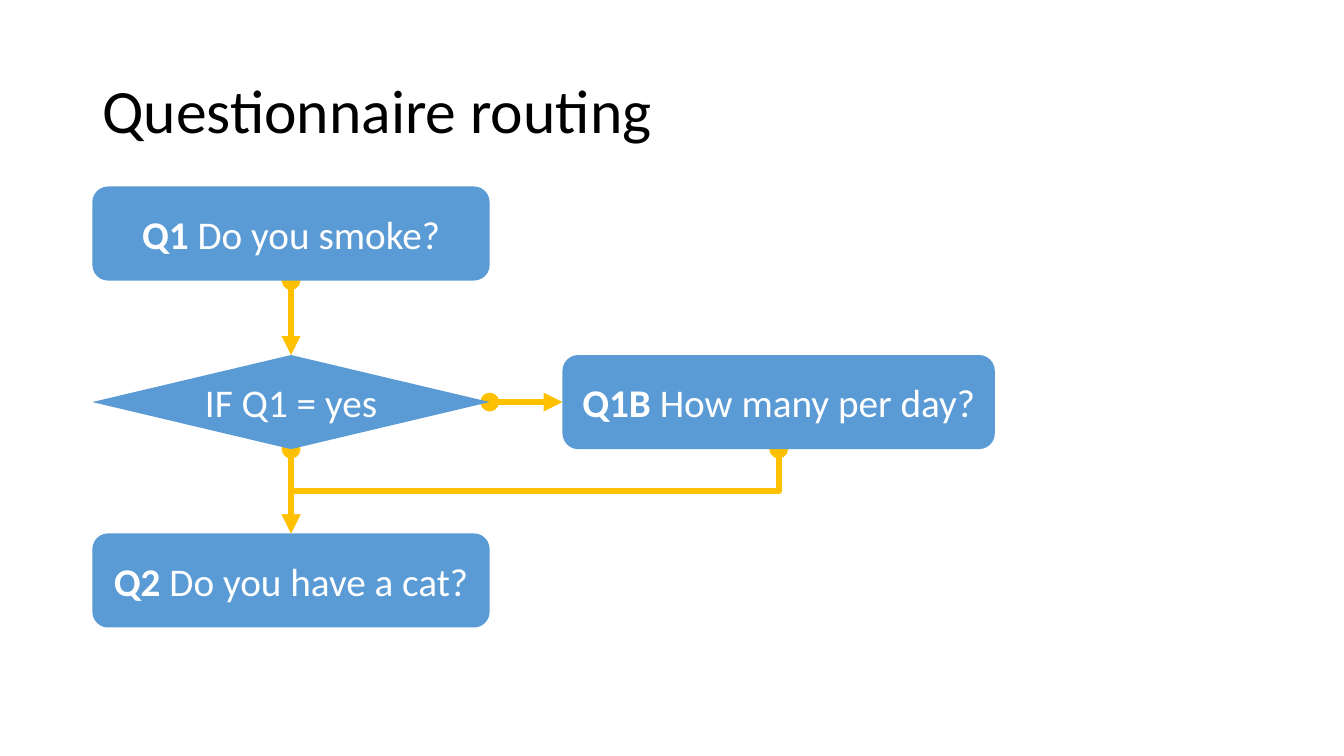
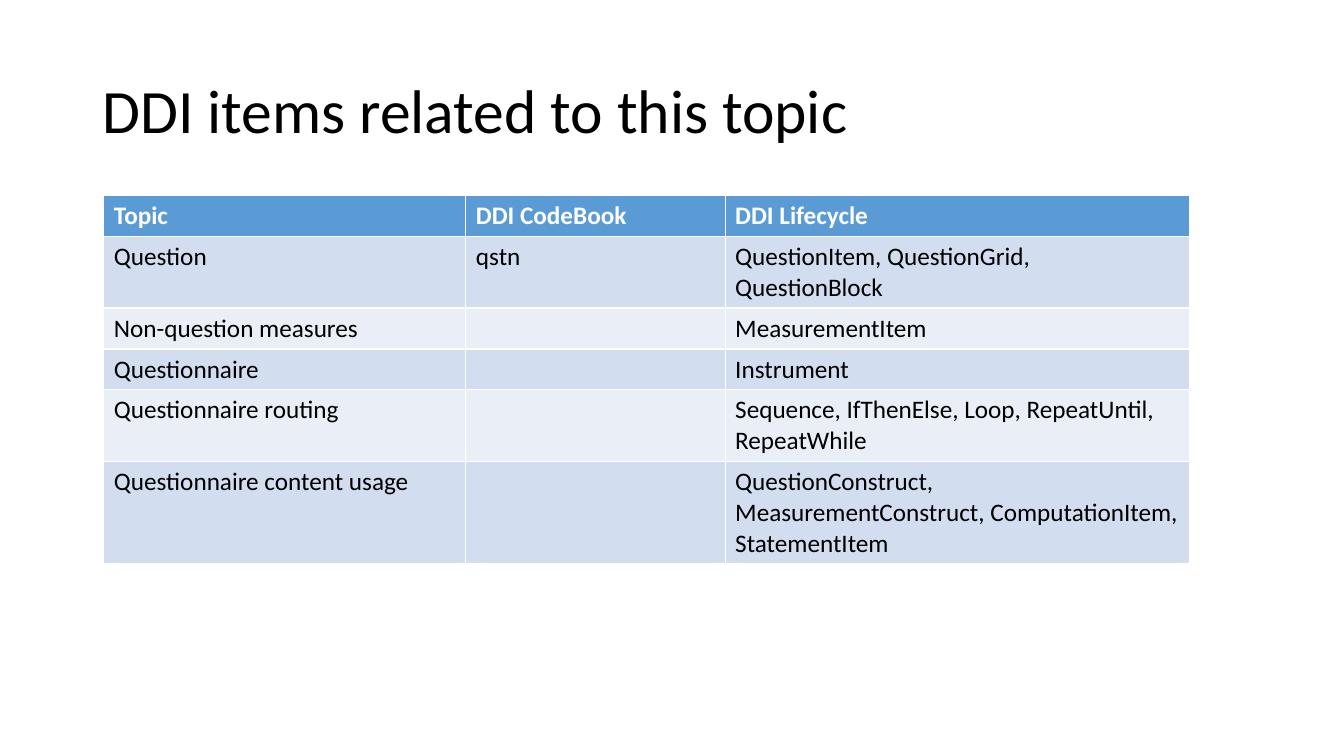
from lxml import etree
from pptx import Presentation
from pptx.dml.color import RGBColor
from pptx.enum import shapes, text
from pptx.oxml import ns
from pptx.util import Pt

FONT = "Calibri"
COLORS = {
    "ink": "000000",
    "paper": "FFFFFF",
    "blue": "5B9BD5",
    "band_dark": "D2DEEF",
    "band_light": "EAEFF7",
    "arrow": "FFC000",
}
TITLE_BOX = (66, 28.8, 828, 104.4)
FLOW_BOX = (66, 133.2, 644.6, 315)
TABLE_BOX = (74.2, 139.7, 775.8, 175.2)

TOP, LEFT, BOTTOM, RIGHT = range(4)  # connection sites of a box or a decision

DDI_ITEMS = [
    ("Topic", "DDI CodeBook", "DDI Lifecycle"),
    ("Question", "qstn", "QuestionItem, QuestionGrid, QuestionBlock"),
    ("Non-question measures", "", "MeasurementItem"),
    ("Questionnaire", "", "Instrument"),
    ("Questionnaire routing", "", "Sequence, IfThenElse, Loop, RepeatUntil, RepeatWhile"),
    ("Questionnaire content usage", "",
     "QuestionConstruct, MeasurementConstruct, ComputationItem, StatementItem"),
]


def rgb(name):
    return RGBColor.from_string(COLORS[name])


def points(*lengths):
    return [Pt(length) for length in lengths]


def write(frame, body, *, lead="", size=18, color="ink", bold=False,
          align=text.PP_ALIGN.LEFT, anchor=text.MSO_ANCHOR.TOP, spacing=None):
    """Fill a text frame with an optional bold lead and the body."""
    frame.word_wrap = True
    frame.vertical_anchor = anchor
    paragraph = frame.paragraphs[0]
    paragraph.alignment = align
    paragraph.line_spacing = spacing
    for words, weight in ((lead, True), (body, bold)):
        if words:
            run = paragraph.add_run()
            run.text = words
            run.font.name = FONT
            run.font.size = Pt(size)
            run.font.bold = weight
            run.font.color.rgb = rgb(color)


def add_titled_slide(deck, heading):
    slide = deck.slides.add_slide(deck.slide_layouts[5])
    title = slide.shapes.title
    title.left, title.top, title.width, title.height = points(*TITLE_BOX)
    title.text_frame.auto_size = text.MSO_AUTO_SIZE.NONE
    write(title.text_frame, heading, size=44, anchor=text.MSO_ANCHOR.MIDDLE, spacing=0.9)
    return slide


def add_step(slide, box, body, lead="", outline=shapes.MSO_SHAPE.ROUNDED_RECTANGLE):
    step = slide.shapes.add_shape(outline, *points(*box))
    step.shadow.inherit = False
    step.fill.solid()
    step.fill.fore_color.rgb = rgb("blue")
    step.line.fill.background()
    write(step.text_frame, body, lead=lead, size=28, color="paper",
          align=text.PP_ALIGN.CENTER, anchor=text.MSO_ANCHOR.MIDDLE)
    return step


def add_route(slide, source, source_site, target, target_site,
              kind=shapes.MSO_CONNECTOR.STRAIGHT):
    """Glue an arrow to two steps and place it behind them."""
    route = slide.shapes.add_connector(kind, 0, 0, 0, 0)
    route.begin_connect(source, source_site)
    route.end_connect(target, target_site)
    route.line.color.rgb = rgb("arrow")
    route.line.width = Pt(4.5)
    line = route.line._get_or_add_ln()
    for end, head in (("a:headEnd", "oval"), ("a:tailEnd", "triangle")):
        etree.SubElement(line, ns.qn(end), type=head)
    etree.SubElement(route._element.spPr, ns.qn("a:effectLst"))
    slide.shapes._spTree.insert(2, route._element)
    return route


def turn_down(route):
    """Turn an elbow that runs down and to the left so that it leaves vertically."""
    across, down = route.width, route.height
    center_x, center_y = route.left + across // 2, route.top + down // 2
    route._element.spPr.xfrm.flipH = False
    route.left, route.top = center_x - down // 2, center_y - across // 2
    route.width, route.height = down, across
    route.rotation = 90


def add_flow(slide, box):
    left, top, width, height = box
    step_width, step_height, gap = 283.8, 67.2, 52
    side_left = left + step_width + gap
    side_width = width - step_width - gap
    check_top = top + 120.4
    last_top = top + height - step_height

    smoke = add_step(slide, (left, top, step_width, step_height), " Do you smoke?", "Q1")
    check = add_step(slide, (left, check_top, step_width, step_height), "IF Q1 = yes",
                     outline=shapes.MSO_SHAPE.FLOWCHART_DECISION)
    amount = add_step(slide, (side_left, check_top, side_width, step_height),
                      "How many per day?", "Q1B ")
    cat = add_step(slide, (left, last_top, step_width, step_height),
                   " Do you have a cat?", "Q2")

    add_route(slide, smoke, BOTTOM, check, TOP)
    add_route(slide, check, RIGHT, amount, LEFT)
    add_route(slide, check, BOTTOM, cat, TOP)
    turn_down(add_route(slide, amount, BOTTOM, cat, TOP, shapes.MSO_CONNECTOR.ELBOW))


def add_item_table(slide, box, rows):
    table = slide.shapes.add_table(len(rows), len(rows[0]), *points(*box)).table
    for column, width in zip(table.columns, (258.6, 185.2, 332)):
        column.width = Pt(width)
    for row_number, row in enumerate(rows):
        header = row_number == 0
        band = "band_dark" if row_number % 2 else "band_light"
        for column_number, entry in enumerate(row):
            cell = table.cell(row_number, column_number)
            cell.fill.solid()
            cell.fill.fore_color.rgb = rgb("blue" if header else band)
            write(cell.text_frame, entry, bold=header, color="paper" if header else "ink")


def main():
    deck = Presentation()
    deck.slide_width, deck.slide_height = points(960, 540)
    add_flow(add_titled_slide(deck, "Questionnaire routing"), FLOW_BOX)
    add_item_table(add_titled_slide(deck, "DDI items related to this topic"),
                   TABLE_BOX, DDI_ITEMS)
    deck.save("out.pptx")


if __name__ == "__main__":
    main()
